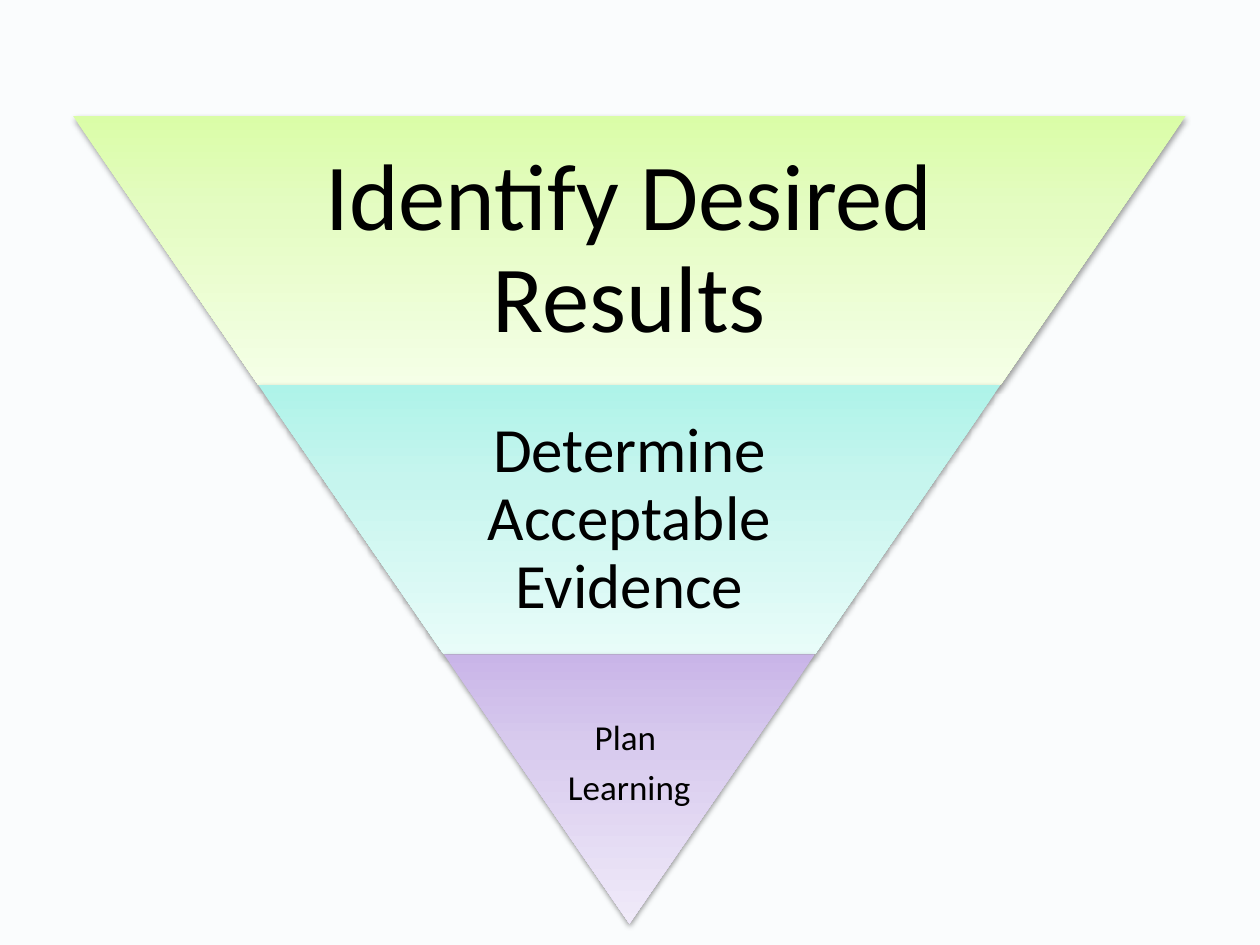
import copy
from dataclasses import dataclass

import pptx
import pptx.dml.color
import pptx.enum.shapes
import pptx.enum.text
import pptx.oxml
import pptx.oxml.ns
import pptx.util
from pptx.util import Inches


@dataclass(frozen=True)
class Theme:
    background: str = "FAFCFD"
    text: str = "000000"
    font: str = "Calibri"
    green: tuple = ("DAFDA7", "E4FCC2", "F5FFE7")
    teal: tuple = ("AEF3E9", "C6F5EE", "E8FCF9")
    purple: tuple = ("C9B5E8", "D8CBEE", "F0EAF9")
    stops: tuple = (0, 0.35, 1)
    large: int = 54
    medium: int = 36
    small: int = 20


THEME = Theme()

# Paragraphs, gradient, type size, text width as a share of the band,
# inset, and extra inset below the text
BANDS = [
    (["Identify Desired Results"], THEME.green, THEME.large, 0.65, 0.07, 0),
    (["Determine Acceptable Evidence"], THEME.teal, THEME.medium, 0.65, 0.05, 0),
    (["Plan ", "Learning"], THEME.purple, THEME.small, 1, 0.03, 0.4),
]

SHADOW = (
    f'<a:effectLst {pptx.oxml.ns.nsdecls("a")}>'
    '<a:outerShdw blurRad="40000" dist="20000" dir="5400000" rotWithShape="0">'
    '<a:srgbClr val="000000"><a:alpha val="38000"/></a:srgbClr>'
    "</a:outerShdw></a:effectLst>"
)


def rgb(value):
    return pptx.dml.color.RGBColor.from_string(value)


def fill_gradient(shape, colors):
    fill = shape.fill
    fill.gradient()
    fill.gradient_angle = 90
    stop_list = shape._element.spPr.find(".//" + pptx.oxml.ns.qn("a:gsLst"))
    stop_list.append(copy.deepcopy(stop_list[-1]))
    for stop, position, color in zip(fill.gradient_stops, THEME.stops, colors):
        stop.position = position
        stop.color.rgb = rgb(color)


def add_band(group, left, top, width, height, slant, colors):
    """Upside-down trapezoid with a gradient and a soft shadow."""
    shape = group.shapes.add_shape(
        pptx.enum.shapes.MSO_SHAPE.TRAPEZOID, left, top, width, height)
    shape.rotation = 180
    shape.adjustments[0] = slant / min(width, height)
    fill_gradient(shape, colors)
    shape.line.fill.background()
    shape._element.spPr.append(pptx.oxml.parse_xml(SHADOW))


def add_label(group, left, top, width, height, lines, size, inset, extra):
    """Centred band label."""
    frame = group.shapes.add_textbox(left, top, width, height).text_frame
    frame.word_wrap = True
    frame.vertical_anchor = pptx.enum.text.MSO_ANCHOR.MIDDLE
    frame.margin_left = frame.margin_right = frame.margin_top = Inches(inset)
    frame.margin_bottom = Inches(inset + extra)
    for index, line in enumerate(lines):
        paragraph = frame.add_paragraph() if index else frame.paragraphs[0]
        paragraph.alignment = pptx.enum.text.PP_ALIGN.CENTER
        paragraph.line_spacing = 0.9
        paragraph.space_after = pptx.util.Pt(0.35 * size)
        run = paragraph.add_run()
        run.text = line
        run.font.size = pptx.util.Pt(size)
        run.font.name = THEME.font
        run.font.color.rgb = rgb(THEME.text)


def add_inverted_pyramid(slide, left, top, width, height):
    """Equal-height bands narrowing to a point at the bottom of the box."""
    group = slide.shapes.add_group_shape()
    count = len(BANDS)
    band_height = height // count
    slant = width / (2 * count)
    for index, (lines, colors, size, share, inset, extra) in enumerate(BANDS):
        band_left = int(left + index * slant)
        band_top = top + index * band_height
        band_width = int(width - 2 * index * slant)
        add_band(group, band_left, band_top, band_width, band_height,
                 slant, colors)
        label_width = int(band_width * share)
        label_left = band_left + (band_width - label_width) // 2
        add_label(group, label_left, band_top, label_width, band_height,
                  lines, size, inset, extra)


def main():
    presentation = pptx.Presentation()
    presentation.slide_width = Inches(10)
    presentation.slide_height = Inches(7.5)
    slide = presentation.slides.add_slide(presentation.slide_layouts[6])

    # Background
    slide.background.fill.solid()
    slide.background.fill.fore_color.rgb = rgb(THEME.background)

    # Planning stages
    add_inverted_pyramid(
        slide, Inches(0.58), Inches(0.92), Inches(8.83), Inches(6.41))
    presentation.save("out.pptx")


if __name__ == "__main__":
    main()
